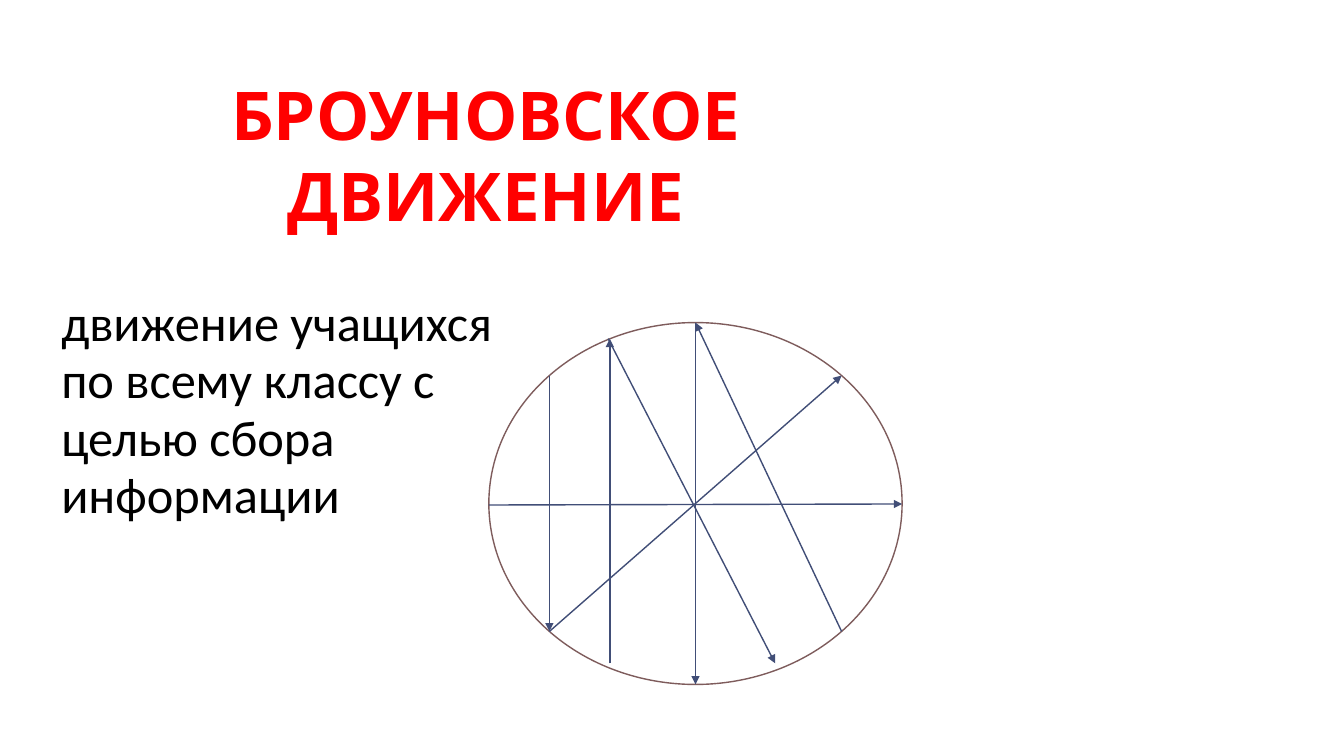
from lxml.etree import SubElement
from pptx import Presentation
from pptx.dml.color import RGBColor
from pptx.enum.shapes import MSO_CONNECTOR, MSO_SHAPE
from pptx.enum.text import MSO_AUTO_SIZE, PP_ALIGN
from pptx.oxml.ns import qn
from pptx.util import Pt

COLORS = {
    "title": "FF0000",
    "body": "000000",
    "white": "FFFFFF",
    "circle": "7E5C5C",
    "arrow": "414E77",
}


def add_text(page, bounds, text, font_name, size, color):
    """Add a wrapped text box with one run; return its paragraph and run."""
    box = page.shapes.add_textbox(*[Pt(value) for value in bounds])
    frame = box.text_frame
    frame.word_wrap = True
    frame.auto_size = MSO_AUTO_SIZE.SHAPE_TO_FIT_TEXT
    para = frame.paragraphs[0]
    span = para.add_run()
    span.text = text
    span.font.name = font_name
    span.font.size = Pt(size)
    span.font.color.rgb = RGBColor.from_string(COLORS[color])
    return para, span


deck = Presentation()
deck.slide_width, deck.slide_height = Pt(960), Pt(540)
page = deck.slides.add_slide(deck.slide_layouts[6])

# Title with a thin white outline around the letters
title_para, title_span = add_text(
    page, (26.64, 48.96, 640.8, 123.84), "БРОУНОВСКОЕ ДВИЖЕНИЕ",
    "League Spartan", 48, "title")
title_para.alignment = PP_ALIGN.CENTER
title_span.font.bold = True
properties = title_span.font._element
outline = SubElement(properties, qn("a:ln"), w=str(Pt(0.75)))
outline_fill = SubElement(outline, qn("a:solidFill"))
SubElement(outline_fill, qn("a:srgbClr"), val=COLORS["white"])
properties.insert(0, outline)

body_para, body_span = add_text(
    page, (36.72, 207.36, 357.12, 172.8),
    "движение учащихся по всему классу с целью сбора информации",
    "Calibri", 36, "body")
body_para.line_spacing = 0.95

# Classroom circle
left, top, width, height = 349.2, 230.4, 295.2, 258.48
right, bottom = left + width, top + height
center_x, center_y = left + width / 2, top + height / 2
circle = page.shapes.add_shape(
    MSO_SHAPE.OVAL, Pt(left), Pt(top), Pt(width), Pt(height))
circle.shadow.inherit = False
circle.fill.solid()
circle.fill.fore_color.rgb = RGBColor.from_string(COLORS["white"])
circle.line.color.rgb = RGBColor.from_string(COLORS["circle"])
circle.line.width = Pt(1)

# Paths of the pupils: start and end of each arrow
diagonal_x, diagonal_y = width / 2 * 0.5 ** 0.5, height / 2 * 0.5 ** 0.5
west, east = center_x - diagonal_x, center_x + diagonal_x
north, south = center_y - diagonal_y, center_y + diagonal_y
upper, lower = 241.92, 473.76
paths = [
    ((center_x, top), (center_x, bottom)),
    ((left, 360.72), (right, 360)),
    ((west, south), (east, north)),
    ((east, south), (center_x, top)),
    ((west, north), (west, south)),
    ((434.4, upper), (553.68, lower)),
    ((435.6, lower), (435.6, upper)),
]
for start, end in paths:
    arrow = page.shapes.add_connector(
        MSO_CONNECTOR.STRAIGHT, *[Pt(value) for value in start + end])
    arrow.line.color.rgb = RGBColor.from_string(COLORS["arrow"])
    arrow.line.width = Pt(1)
    SubElement(arrow.line._get_or_add_ln(), qn("a:tailEnd"), type="triangle")
    SubElement(arrow._element.spPr, qn("a:effectLst"))

deck.save("out.pptx")
